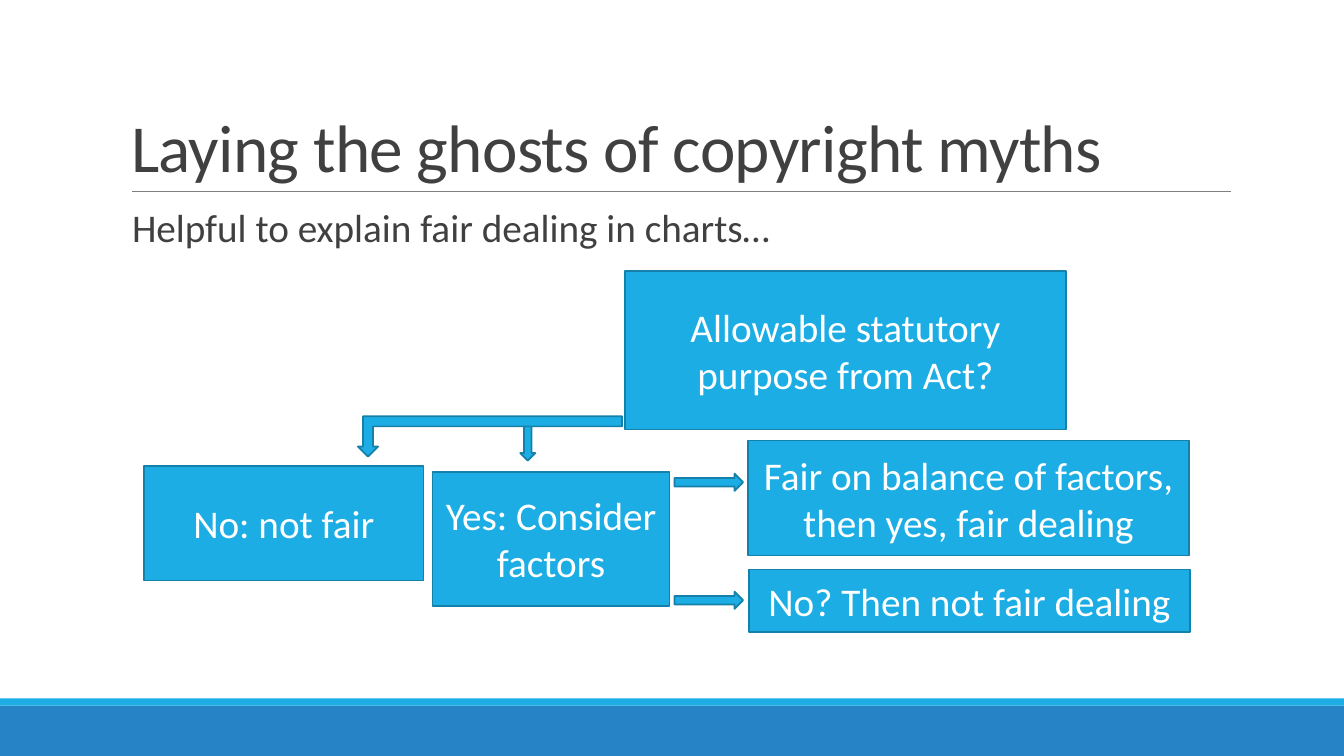
from lxml import etree
from pptx import Presentation
from pptx import util as u
from pptx.dml.color import RGBColor
from pptx.enum import shapes, text
from pptx.oxml.ns import qn

PX = 9144  # 100 px to the inch
BLUE, EDGE, DARK = "1CADE4", "1580A9", "404040"
KIND = shapes.MSO_SHAPE


def write(frame, words, size=28, color="FFFFFF", align=text.PP_ALIGN.CENTER,
          anchor=text.MSO_ANCHOR.MIDDLE, leading=1.0, tracking=0):
    frame.word_wrap = True
    frame.auto_size = text.MSO_AUTO_SIZE.NONE
    frame.vertical_anchor = anchor
    para = frame.paragraphs[0]
    para.alignment = align
    para.line_spacing = leading
    span = para.add_run()
    span.text = words
    span.font.name = "Calibri"
    span.font.size = u.Pt(size)
    span.font.color.rgb = RGBColor.from_string(color)
    if tracking:
        span.font._element.set("spc", str(tracking))


def draw(kind, place, fill=BLUE, edge=EDGE):
    shape = page.shapes.add_shape(kind, *[v * PX for v in place])
    shape.shadow.inherit = False
    shape.fill.solid()
    shape.fill.fore_color.rgb = RGBColor.from_string(fill)
    if edge:
        shape.line.color.rgb = RGBColor.from_string(edge)
        shape.line.width = u.Pt(1.25)
    else:
        shape.line.fill.background()
    return shape


deck = Presentation()
deck.slide_width, deck.slide_height = 1333 * PX, 750 * PX
page = deck.slides.add_slide(deck.slide_layouts[5])

# Footer bands
draw(KIND.RECTANGLE, (0, 700, 1333, 50), fill="2683C6", edge=None)
draw(KIND.RECTANGLE, (0, 693, 1333, 7), edge=None)

# Title and the rule below it
title = page.shapes.title
title.left, title.top, title.width, title.height = [v * PX for v in (120, 31, 1100, 159)]
write(title.text_frame, "Laying the ghosts of copyright myths", size=48, color=DARK,
      align=text.PP_ALIGN.LEFT, anchor=text.MSO_ANCHOR.BOTTOM, leading=0.85, tracking=-50)
rule = page.shapes.add_connector(shapes.MSO_CONNECTOR.STRAIGHT,
                                 *[v * PX for v in (131, 190, 1221, 190)])
rule.line.color.rgb = RGBColor.from_string("808080")
rule.line.width = u.Pt(0.5)
etree.SubElement(rule._element.spPr, qn("a:effectLst"))

# Introductory sentence
intro = page.shapes.add_textbox(*[v * PX for v in (131, 202, 1089, 60)])
intro.text_frame.margin_left = intro.text_frame.margin_right = 0
write(intro.text_frame, "Helpful to explain fair dealing in charts…", color=DARK,
      align=text.PP_ALIGN.LEFT, anchor=text.MSO_ANCHOR.TOP, leading=0.9)

# Flow chart boxes
for words, place in [
    ("No: not fair", (143, 462, 277, 114)),
    ("Yes: Consider factors", (429, 468, 235, 133)),
    ("Allowable statutory purpose from Act?", (620, 269, 437, 157)),
    ("Fair on balance of factors, then yes, fair dealing", (742, 437, 437, 114)),
    ("No? Then not fair dealing", (743, 565, 437, 62)),
]:
    box = draw(KIND.FLOWCHART_PROCESS, place)
    write(box.text_frame, words)

# Block arrows; the bent one is turned to point down on the left
draw(KIND.DOWN_ARROW, (516, 417, 15, 40))
draw(KIND.BENT_UP_ARROW, (355, 413, 262, 40)).rotation = 180
for top in (470, 587):
    draw(KIND.RIGHT_ARROW, (669, top, 68, 17))

deck.save("out.pptx")
